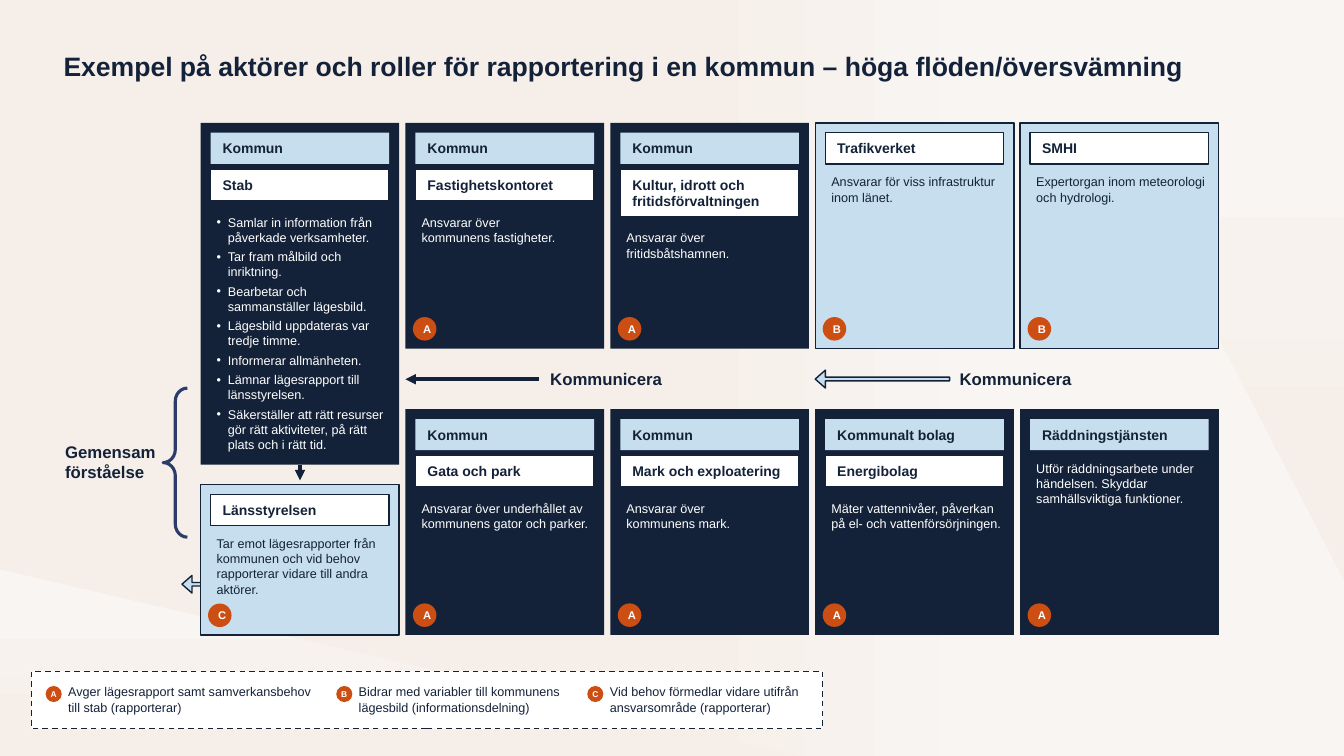
import pptx
import pptx.util
import pptx.dml.color
import pptx.enum.dml
import pptx.enum.shapes
import pptx.enum.text
import pptx.oxml.ns
from lxml import etree

Pt = pptx.util.Pt
RGBColor = pptx.dml.color.RGBColor
KIND = pptx.enum.shapes.MSO_SHAPE
ALIGN = pptx.enum.text.PP_ALIGN
MID = pptx.enum.text.MSO_ANCHOR.MIDDLE
TOP = pptx.enum.text.MSO_ANCHOR.TOP
qn = pptx.oxml.ns.qn

NAVY = RGBColor(0x14, 0x22, 0x39)
BLUE = RGBColor(0xC6, 0xDE, 0xED)
WHITE = RGBColor(0xFF, 0xFF, 0xFF)
RUST = RGBColor(0xCC, 0x4E, 0x13)
BRACE = RGBColor(0x2C, 0x3C, 0x6A)
SAND = RGBColor(0xF6, 0xEF, 0xE9)
CREAM = RGBColor(0xF7, 0xF2, 0xEE)
PALE = RGBColor(0xF8, 0xF5, 0xF3)

FADE = [(0, PALE), (25, PALE), (50, CREAM), (75, SAND), (100, SAND)]
BASE = [(0, SAND), (50, SAND), (75, PALE), (100, PALE)]

LEFT, STEP, WIDE = 143.3, 146.35, 141.9
UPPER, LOWER, TALL = 87.8, 292.3, 161.3


class Board:
    font = "Arial"

    def __init__(self, deck):
        self.slide = deck.slides.add_slide(deck.slide_layouts[6])
        self.shapes = self.slide.shapes

    def paint(self, shape, fill=None, line=None, width=1):
        shape.shadow.inherit = False
        if fill is None:
            shape.fill.background()
        else:
            shape.fill.solid()
            shape.fill.fore_color.rgb = fill
        if line is None:
            shape.line.fill.background()
        else:
            shape.line.color.rgb = line
            shape.line.width = Pt(width)

    def block(self, kind, box, fill=None, line=None, width=1, bends=()):
        shape = self.shapes.add_shape(kind, *map(Pt, box))
        self.paint(shape, fill, line, width)
        for spot, bend in enumerate(bends):
            shape.adjustments[spot] = bend
        return shape

    def fade(self, shape, stops, angle):
        shape.fill.gradient()
        shape.fill.gradient_angle = angle
        items = shape._element.spPr.find(".//" + qn("a:gsLst"))
        for item in list(items):
            items.remove(item)
        for place, color in stops:
            stop = etree.SubElement(items, qn("a:gs"), pos=str(place * 1000))
            etree.SubElement(stop, qn("a:srgbClr"), val=str(color))

    def wedge(self, first, *others):
        maker = self.shapes.build_freeform(*map(Pt, first), scale=1.0)
        maker.add_line_segments([(Pt(x), Pt(y)) for x, y in others], close=True)
        shape = maker.convert_to_shape()
        self.paint(shape)
        self.fade(shape, FADE, 270)

    def letter(self, shape, lines, size, color, bold=False, anchor=MID,
               align=ALIGN.LEFT, inset=None, bullet=False, gap=None):
        frame = shape.text_frame
        frame.word_wrap = True
        frame.vertical_anchor = anchor
        if inset:
            (frame.margin_left, frame.margin_top,
             frame.margin_right, frame.margin_bottom) = map(Pt, inset)
        for spot, line in enumerate(lines):
            para = frame.paragraphs[0] if spot == 0 else frame.add_paragraph()
            para.alignment = align
            if bullet:
                props = para._p.get_or_add_pPr()
                props.set("marL", str(Pt(8)))
                props.set("indent", str(-Pt(8)))
                etree.SubElement(props, qn("a:buFont"), typeface=self.font)
                etree.SubElement(props, qn("a:buChar"), char="•")
                para.space_after = Pt(3)
            if gap:
                para.line_spacing = gap
            for part, text in enumerate(line.split("\n")):
                if part:
                    para.add_line_break()
                run = para.add_run()
                run.text = text
                run.font.name = self.font
                run.font.size = Pt(size)
                run.font.bold = bold
                run.font.color.rgb = color

    def label(self, box, lines, size, bold=False, anchor=TOP, gap=None):
        shape = self.shapes.add_textbox(*map(Pt, box))
        self.letter(shape, lines, size, NAVY, bold, anchor, gap=gap)

    def badge(self, x, y, mark, side, size):
        shape = self.block(KIND.OVAL, (x, y, side, side), RUST)
        self.letter(shape, [mark], size, WHITE, True, align=ALIGN.CENTER)

    def arrow(self, start, end):
        line = self.shapes.add_connector(
            pptx.enum.shapes.MSO_CONNECTOR.STRAIGHT, *map(Pt, start + end))
        line.line.color.rgb = NAVY
        line.line.width = Pt(2.5)
        etree.SubElement(line.line._get_or_add_ln(), qn("a:tailEnd"), type="triangle")
        etree.SubElement(line._element.spPr, qn("a:effectLst"))

    def card(self, col, top, heads, body, mark=None, tall=TALL, light=False,
             extra=0, bullet=False):
        x = LEFT + col * STEP
        shape = self.block(KIND.RECTANGLE, (x, top, WIDE, tall),
                           BLUE if light else NAVY, NAVY if light else None)
        start = (36.7 if len(heads) == 1 else 65.5) + extra
        self.letter(shape, body, 9, NAVY if light else WHITE, anchor=TOP,
                    inset=(11.5, start, 5.8, 11.5), bullet=bullet)
        for row, head in enumerate(heads):
            plain = light or row > 0
            high = 22.3 + (extra if row else 0)
            bar = self.block(KIND.RECTANGLE, (x + 7.1, top + 7 + row * 26.2, 127.6, high),
                             WHITE if plain else BLUE, NAVY if plain else None)
            self.letter(bar, [head], 10, NAVY, True, inset=(8.6, 0, 5.8, 0))
        if mark:
            self.badge(x + 5.3, top + tall - 22.6, mark, 16.8, 8)


def main():
    deck = pptx.Presentation()
    deck.slide_width, deck.slide_height = Pt(960), Pt(540)
    board = Board(deck)

    back = board.block(KIND.RECTANGLE, (0, 0, 960, 540))
    board.fade(back, BASE, 0)
    board.wedge((0, 406.8), (571.7, 540), (0, 540))
    board.wedge((745.9, 0), (960, 414), (960, 0))
    board.block(KIND.LEFT_ARROW, (130, 411, 13.5, 12.6), BLUE, NAVY, bends=(0.2, 0.57))

    legend = board.block(KIND.RECTANGLE, (22.4, 479.6, 565.2, 41), WHITE, NAVY)
    legend.line.dash_style = pptx.enum.dml.MSO_LINE.DASH
    for x, wide, mark, text in [
        (32.6, 190.8, "A", "Avger lägesrapport samt samverkansbehov till stab (rapporterar)"),
        (240.2, 170.6, "B", "Bidrar med variabler till kommunens lägesbild (informationsdelning)"),
        (419.5, 150.5, "C", "Vid behov förmedlar vidare utifrån ansvarsområde (rapporterar)"),
    ]:
        board.badge(x, 490, mark, 11.5, 6)
        board.label((x + 9, 485.3, wide, 28.8), [text], 9)

    board.label((38.3, 26, 871, 44.6), [
        "Exempel på aktörer och roller för rapportering i en kommun – höga flöden/översvämning",
    ], 19, True, MID, 0.9)

    board.arrow((214.3, 332), (214.3, 343.2))
    board.card(0, UPPER, ["Kommun", "Stab"], [
        "Samlar in information från påverkade verksamheter.",
        "Tar fram målbild och inriktning.",
        "Bearbetar och sammanställer lägesbild.",
        "Lägesbild uppdateras var \ntredje timme.",
        "Informerar allmänheten.",
        "Lämnar lägesrapport till länsstyrelsen.",
        "Säkerställer att rätt resurser gör rätt aktiviteter, på rätt plats och i rätt tid.",
    ], tall=244.1, bullet=True)
    board.card(1, UPPER, ["Kommun", "Fastighetskontoret"],
               ["Ansvarar över \nkommunens fastigheter."], "A")
    board.block(KIND.LEFT_BRACE, (116.6, 277.2, 17.3, 106.5), None, BRACE, 2.25, (0.54, 0.5))
    board.label((39.4, 311.8, 87.1, 36.4), ["Gemensam", "förståelse"], 12, True)
    board.arrow((384.8, 270.9), (289.6, 270.9))
    board.card(2, UPPER, ["Kommun", "Kultur, idrott och fritidsförvaltningen"],
               ["Ansvarar över fritidsbåtshamnen."], "A", extra=11.2)
    board.card(3, UPPER, ["Trafikverket"],
               ["Ansvarar för viss infrastruktur inom länet."], "B", light=True)
    board.card(4, UPPER, ["SMHI"],
               ["Expertorgan inom meteorologi och hydrologi."], "B", light=True)

    for col, (heads, body) in enumerate([
        (["Kommun", "Gata och park"],
         "Ansvarar över underhållet av kommunens gator och parker."),
        (["Kommun", "Mark och exploatering"], "Ansvarar över \nkommunens mark."),
        (["Kommunalt bolag", "Energibolag"],
         "Mäter vattennivåer, påverkan på el- och vattenförsörjningen."),
        (["Räddningstjänsten"],
         "Utför räddningsarbete under händelsen. Skyddar samhällsviktiga funktioner."),
    ], 1):
        board.card(col, LOWER, heads, [body], "A")

    board.card(0, 346.1, ["Länsstyrelsen"], [
        "Tar emot lägesrapporter från kommunen och vid behov rapporterar vidare till andra aktörer.",
    ], "C", tall=107.6, light=True)
    for x in (385.9, 678.4):
        board.label((x, 260, 118.8, 21.8), ["Kommunicera"], 12, True)
    board.block(KIND.LEFT_ARROW, (582.3, 264.4, 96, 12.8), BLUE, NAVY, bends=(0.21, 0.57))

    deck.save("out.pptx")


if __name__ == "__main__":
    main()
